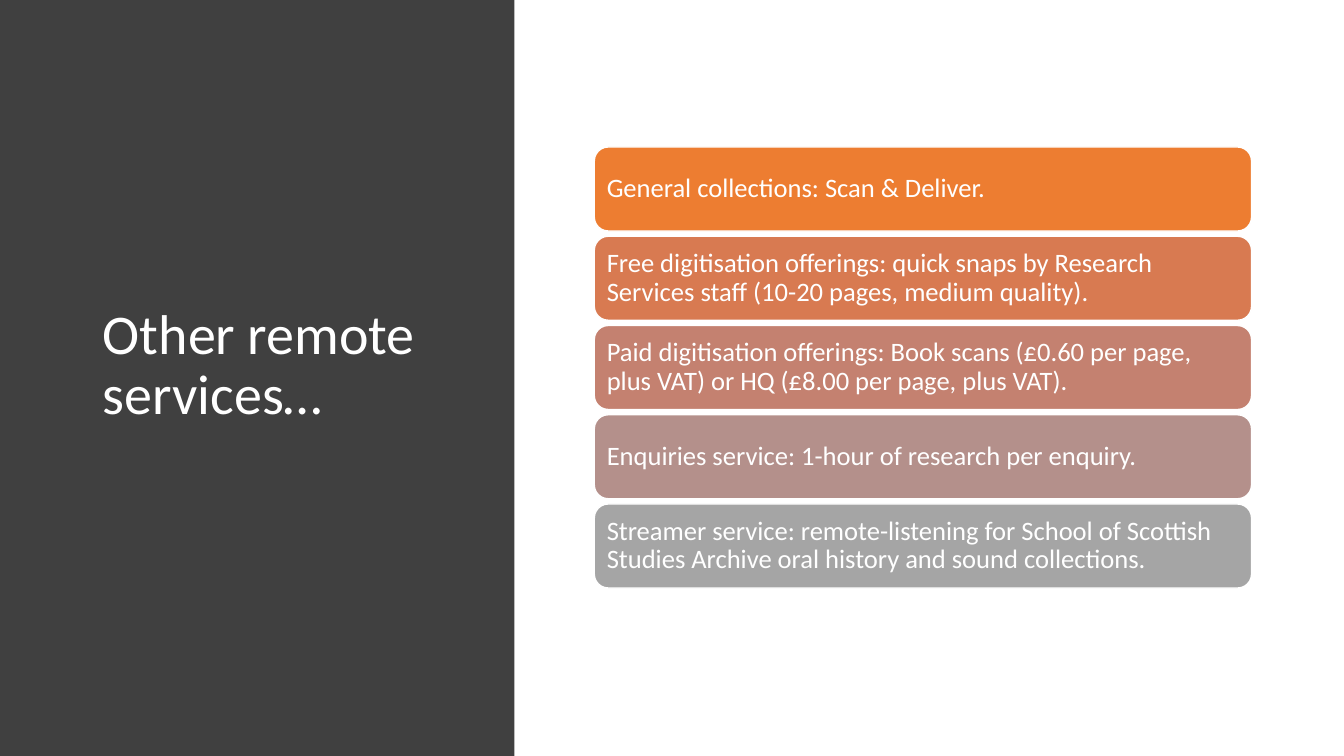
from dataclasses import dataclass

from pptx import Presentation
from pptx import util as u
from pptx.dml.color import RGBColor
from pptx.enum import shapes, text

PX = 9525
FONT = "Calibri"
WHITE = RGBColor(0xFF, 0xFF, 0xFF)
DARK = RGBColor(0x40, 0x40, 0x40)
ORANGE = RGBColor(0xED, 0x7D, 0x31)
RUST = RGBColor(0xD8, 0x7A, 0x51)
CLAY = RGBColor(0xC4, 0x81, 0x70)
MAUVE = RGBColor(0xB4, 0x90, 0x8B)
GREY = RGBColor(0xA5, 0xA5, 0xA5)

LEFT, TOP, WIDTH, HEIGHT, PITCH = 566, 140, 626, 80, 85


@dataclass(frozen=True)
class Service:
    label: str
    fill: RGBColor


SERVICES = [
    Service("General collections: Scan & Deliver.", ORANGE),
    Service("Free digitisation offerings: quick snaps by Research Services staff "
            "(10-20 pages, medium quality).", RUST),
    Service("Paid digitisation offerings: Book scans (£0.60 per page, plus VAT) "
            "or HQ (£8.00 per page, plus VAT).", CLAY),
    Service("Enquiries service: 1-hour of research per enquiry.", MAUVE),
    Service("Streamer service: remote-listening for School of Scottish Studies "
            "Archive oral history and sound collections.", GREY),
]


def px(*sizes: int) -> list[u.Emu]:
    return [u.Emu(size * PX) for size in sizes]


def write(shape, words: str, *, size: int, side: int, edge: int) -> None:
    frame = shape.text_frame
    frame.word_wrap = True
    frame.vertical_anchor = text.MSO_ANCHOR.MIDDLE
    frame.margin_left, frame.margin_right = px(side, side)
    frame.margin_top, frame.margin_bottom = px(edge, edge)
    para = frame.paragraphs[0]
    para.alignment = text.PP_ALIGN.LEFT
    para.line_spacing = 0.9
    run = para.add_run()
    run.text = words
    run.font.name = FONT
    run.font.size = u.Pt(size)
    run.font.color.rgb = WHITE


def block(slide, kind, box: tuple[int, int, int, int], fill: RGBColor):
    shape = slide.shapes.add_shape(kind, *px(*box))
    shape.shadow.inherit = False
    shape.fill.solid()
    shape.fill.fore_color.rgb = fill
    shape.line.fill.background()
    return shape


def card(slide, item: Service, row: int) -> None:
    box = (LEFT, TOP + row * PITCH, WIDTH, HEIGHT)
    shape = block(slide, shapes.MSO_SHAPE.ROUNDED_RECTANGLE, box, item.fill)
    shape.line.color.rgb = WHITE
    shape.line.width = u.Pt(1)
    write(shape, item.label, size=19, side=8, edge=8)


def main() -> None:
    deck = Presentation()
    deck.slide_width, deck.slide_height = px(1280, 720)
    slide = deck.slides.add_slide(deck.slide_layouts[6])
    block(slide, shapes.MSO_SHAPE.RECTANGLE, (0, 0, 490, 720), DARK)
    title = slide.shapes.add_textbox(*px(88, 65, 352, 568))
    write(title, "Other remote services…", size=40, side=10, edge=5)
    for row, item in enumerate(SERVICES):
        card(slide, item, row)
    deck.save("out.pptx")


if __name__ == "__main__":
    main()
